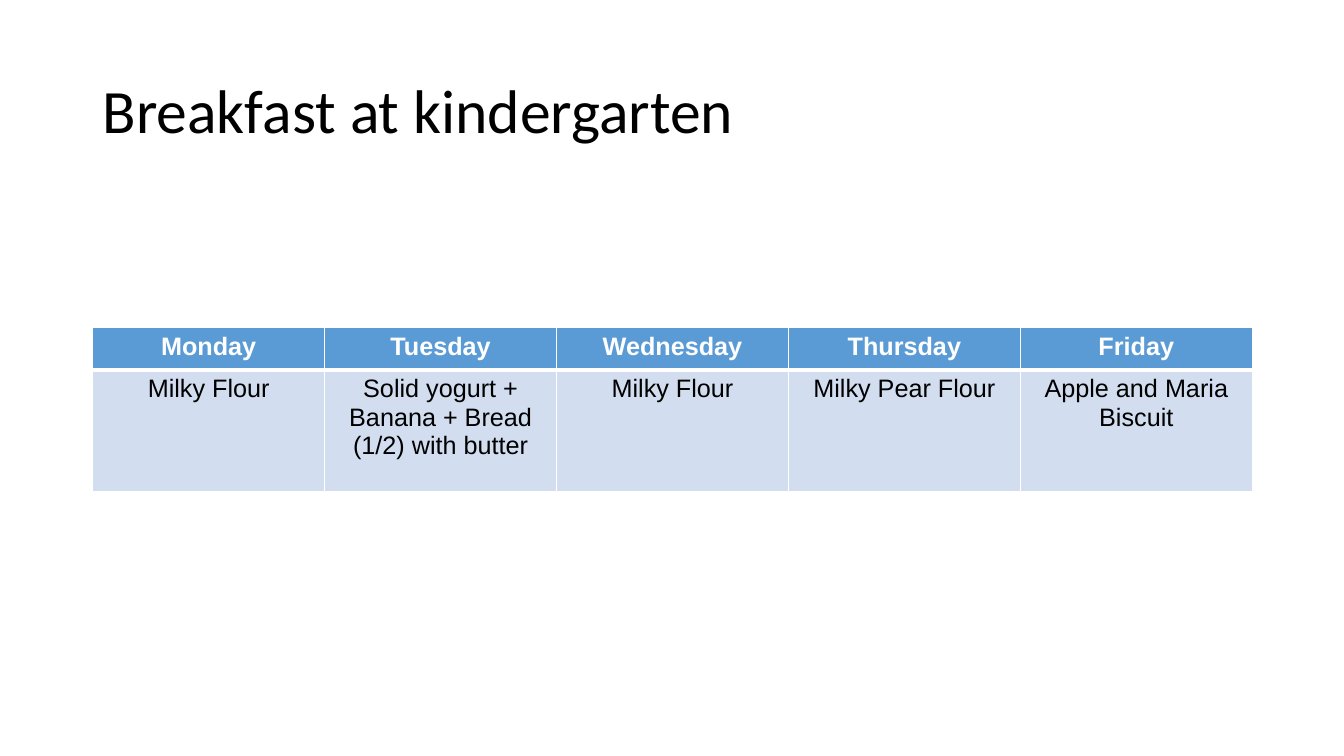
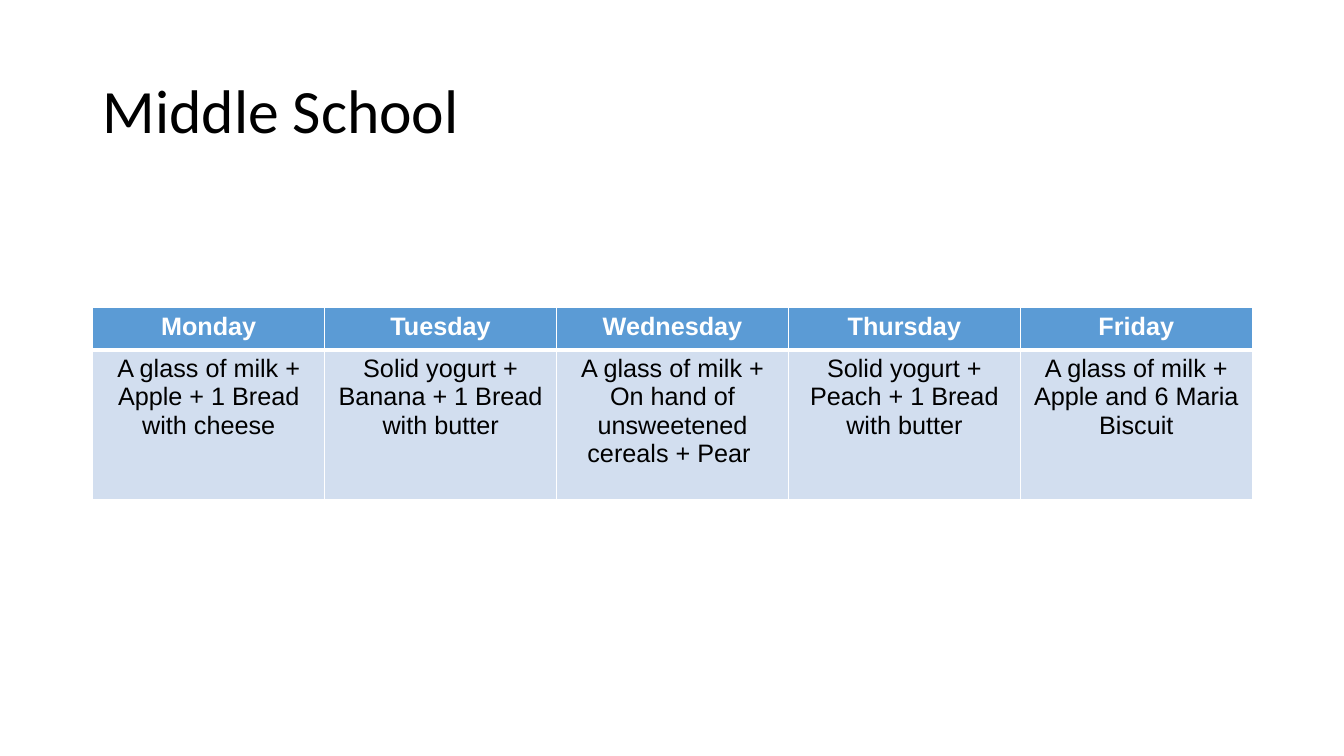
from lxml.etree import SubElement
from pptx import Presentation
from pptx.dml.color import RGBColor
from pptx.enum.text import MSO_ANCHOR, PP_ALIGN
from pptx.oxml.ns import qn
from pptx.util import Inches, Pt

DAYS = ["Monday", "Tuesday", "Wednesday", "Thursday", "Friday"]
MENUS = [
    {
        "title": "Breakfast at kindergarten",
        "top": 3.25,
        "meal_height": 1.21,
        "meals": [
            "Milky Flour",
            "Solid yogurt + Banana + Bread (1/2) with butter",
            "Milky Flour",
            "Milky Pear Flour",
            "Apple and Maria Biscuit",
        ],
    },
    {
        "title": "Middle School",
        "top": 3.05,
        "meal_height": 1.49,
        "meals": [
            "A glass of milk + Apple + 1 Bread with cheese",
            "Solid yogurt + Banana + 1 Bread with butter",
            "A glass of milk + On hand of unsweetened cereals + Pear ",
            "Solid yogurt + Peach + 1 Bread with butter",
            "A glass of milk + Apple and 6 Maria Biscuit",
        ],
    },
]

BLACK = RGBColor(0x00, 0x00, 0x00)
WHITE = RGBColor(0xFF, 0xFF, 0xFF)
BLUE = RGBColor(0x5B, 0x9B, 0xD5)
PALE_BLUE = RGBColor(0xD2, 0xDE, 0xEF)

LEFT, WIDTH = 0.92, 11.5
TITLE_TOP, TITLE_HEIGHT = 0.4, 1.45
HEADER_HEIGHT = 0.42


def write(tf, text, font="Arial", size=18, color=BLACK, bold=False,
          align=PP_ALIGN.CENTER, spacing=None):
    p = tf.paragraphs[0]
    p.alignment = align
    p.line_spacing = spacing
    r = p.add_run()
    r.text = text
    r.font.name = font
    r.font.size = Pt(size)
    r.font.bold = bold
    r.font.color.rgb = color


def set_borders(cell, **widths):
    tc_pr = cell._tc.get_or_add_tcPr()
    for side in "LRTB":
        ln = SubElement(tc_pr, qn(f"a:ln{side}"), w=str(Pt(widths.get(side, 1))))
        fill = SubElement(ln, qn("a:solidFill"))
        SubElement(fill, qn("a:srgbClr"), val=str(WHITE))


def add_title(s, text):
    box = s.shapes.add_textbox(Inches(LEFT), Inches(TITLE_TOP),
                               Inches(WIDTH), Inches(TITLE_HEIGHT))
    tf = box.text_frame
    tf.word_wrap = True
    tf.vertical_anchor = MSO_ANCHOR.MIDDLE
    write(tf, text, font="Calibri", size=44, align=PP_ALIGN.LEFT, spacing=0.9)


def add_menu(s, meals, top, meal_height):
    heights = [HEADER_HEIGHT, meal_height]
    table = s.shapes.add_table(2, len(DAYS), Inches(LEFT), Inches(top),
                               Inches(WIDTH), Inches(sum(heights))).table
    for row, height in zip(table.rows, heights):
        row.height = Inches(height)
    for i, (day, meal) in enumerate(zip(DAYS, meals)):
        table.columns[i].width = Inches(WIDTH / len(DAYS))
        header, body = table.cell(0, i), table.cell(1, i)
        set_borders(header, B=3)
        set_borders(body, T=3)
        for cell, color in ((header, BLUE), (body, PALE_BLUE)):
            cell.fill.solid()
            cell.fill.fore_color.rgb = color
        write(header.text_frame, day, color=WHITE, bold=True)
        write(body.text_frame, meal)


def main():
    """Build the weekly breakfast menu slides."""
    prs = Presentation()
    prs.slide_width, prs.slide_height = Inches(13.33), Inches(7.5)
    for menu in MENUS:
        s = prs.slides.add_slide(prs.slide_layouts[6])
        add_title(s, menu["title"])
        add_menu(s, menu["meals"], menu["top"], menu["meal_height"])
    prs.save("out.pptx")


if __name__ == "__main__":
    main()
